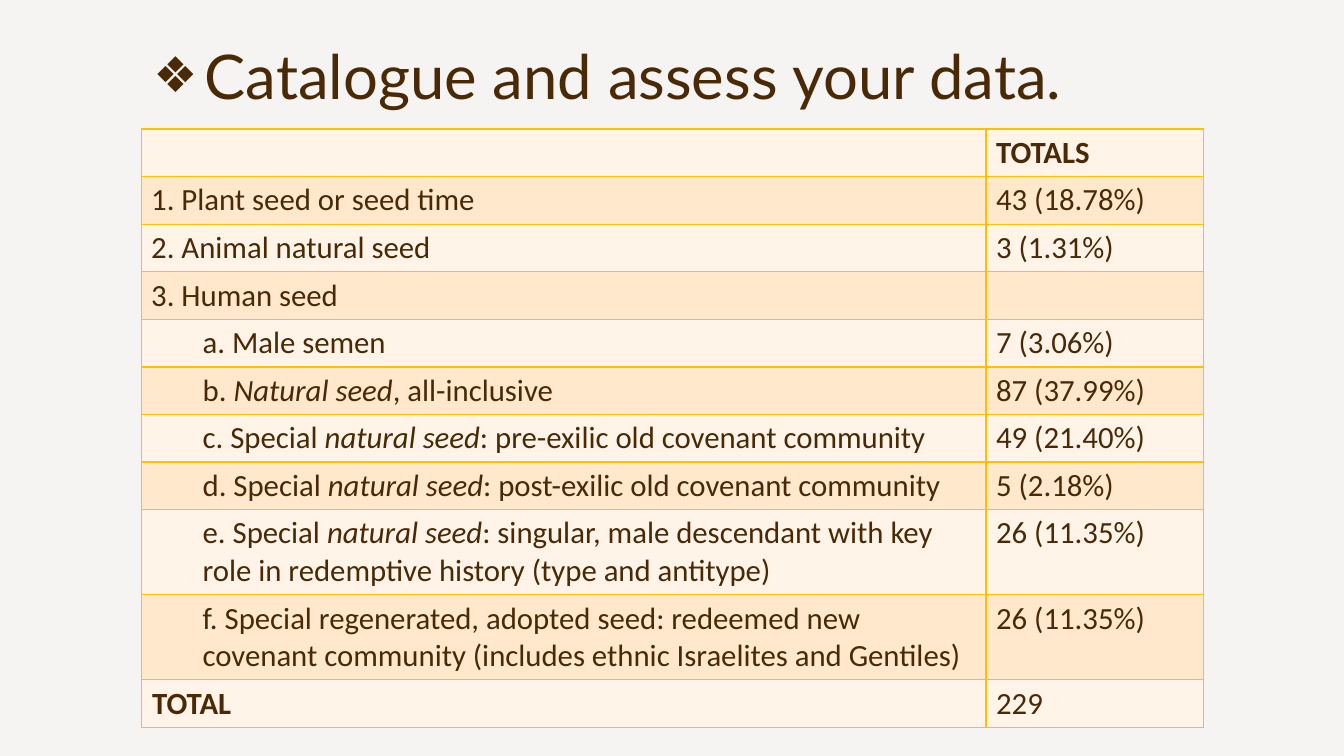
from lxml.etree import SubElement
from pptx import Presentation
from pptx.dml.color import RGBColor
from pptx.enum.text import MSO_ANCHOR
from pptx.oxml.ns import qn
from pptx.util import Inches, Pt

COLORS = {"text": "492906", "page": "F6F4F2", "border": "FFC000",
          "light": "FFF4E7", "dark": "FFE8CC"}
HEADING = "Catalogue and assess your data."
ROWS = [
    ("", "TOTALS", 0),
    ("1. Plant seed or seed time", "43 (18.78%)", 0),
    ("2. Animal natural seed", "3 (1.31%)", 0),
    ("3. Human seed", "", 0),
    ("a. Male semen", "7 (3.06%)", 0.51),
    ("b. *Natural seed*, all-inclusive", "87 (37.99%)", 0.51),
    ("c. Special *natural seed*: pre-exilic old covenant community", "49 (21.40%)", 0.51),
    ("d. Special *natural seed*: post-exilic old covenant community", "5 (2.18%)", 0.51),
    ("e. Special *natural seed*: singular, male descendant with key role in "
     "redemptive history (type and antitype)", "26 (11.35%)", 0.51),
    ("f. Special regenerated, adopted seed: redeemed new covenant community "
     "(includes ethnic Israelites and Gentiles)", "26 (11.35%)", 0.51),
    ("TOTAL", "229", 0.01),
]


def color(name):
    """Return a palette colour."""
    return RGBColor.from_string(COLORS[name])


def style_span(span, font, size, bold=False, italic=False):
    """Format one run of text."""
    span.font.name = font
    span.font.size = Pt(size)
    span.font.bold = bold
    span.font.italic = italic
    span.font.color.rgb = color("text")


def add_heading(page, left, top, width, height):
    """Place the bulleted heading in the body placeholder."""
    body = page.placeholders[1]
    body.left, body.top = Inches(left), Inches(top)
    body.width, body.height = Inches(width), Inches(height)
    body.text_frame.text = HEADING
    body.text_frame.vertical_anchor = MSO_ANCHOR.TOP
    para = body.text_frame.paragraphs[0]
    para.line_spacing = 0.9
    para.space_before = Pt(5)
    style_span(para.runs[0], "Lato", 44)
    properties = para._p.get_or_add_pPr()
    properties.set("marL", str(Inches(1.01)))
    properties.set("indent", str(Inches(-0.51)))
    bullet_color = SubElement(properties, qn("a:buClr"))
    SubElement(bullet_color, qn("a:srgbClr"), val=COLORS["text"])
    SubElement(properties, qn("a:buSzPct"), val="80000")
    SubElement(properties, qn("a:buChar"), char="❖")


def add_borders(cell):
    """Draw a thin line on all four sides of a cell."""
    properties = cell._tc.get_or_add_tcPr()
    for side in ("lnL", "lnR", "lnT", "lnB"):
        line = SubElement(properties, qn(f"a:{side}"), w=str(Pt(1)))
        fill = SubElement(line, qn("a:solidFill"))
        SubElement(fill, qn("a:srgbClr"), val=COLORS["border"])


def fill_cell(cell, text, shade, indent):
    """Write a cell, with the parts between asterisks in italics."""
    add_borders(cell)
    cell.fill.solid()
    cell.fill.fore_color.rgb = color(shade)
    para = cell.text_frame.paragraphs[0]
    if indent:
        para._p.get_or_add_pPr().set("marL", str(Inches(indent)))
    if not text:
        return
    for index, part in enumerate(text.split("*")):
        span = para.add_run()
        span.text = part
        style_span(span, "Calibri", 22, text in ("TOTALS", "TOTAL"), index % 2 == 1)


def add_totals_table(page, left, top, width, height):
    """Place the table of seed categories and their totals."""
    frame = page.shapes.add_table(len(ROWS), 2, Inches(left), Inches(top),
                                  Inches(width), Inches(height))
    table = frame.table
    table.first_row = table.horz_banding = False
    totals_width = 2.16
    table.columns[0].width = Inches(width - totals_width)
    table.columns[1].width = Inches(totals_width)
    for index, (category, total, indent) in enumerate(ROWS):
        table.rows[index].height = Inches(0.41)
        shade = "dark" if index % 2 else "light"
        fill_cell(table.cell(index, 0), category, shade, indent)
        fill_cell(table.cell(index, 1), total, shade, 0)


def main():
    """Build and save the deck."""
    deck = Presentation()
    deck.slide_width, deck.slide_height = Inches(13.33), Inches(7.5)
    page = deck.slides.add_slide(deck.slide_layouts[1])
    page.background.fill.solid()
    page.background.fill.fore_color.rgb = color("page")
    title = page.shapes.title.element
    title.getparent().remove(title)
    add_heading(page, 0.92, 0.41, 11.5, 0.87)
    add_totals_table(page, 1.4, 1.28, 10.54, 5.87)
    deck.save("out.pptx")


if __name__ == "__main__":
    main()
